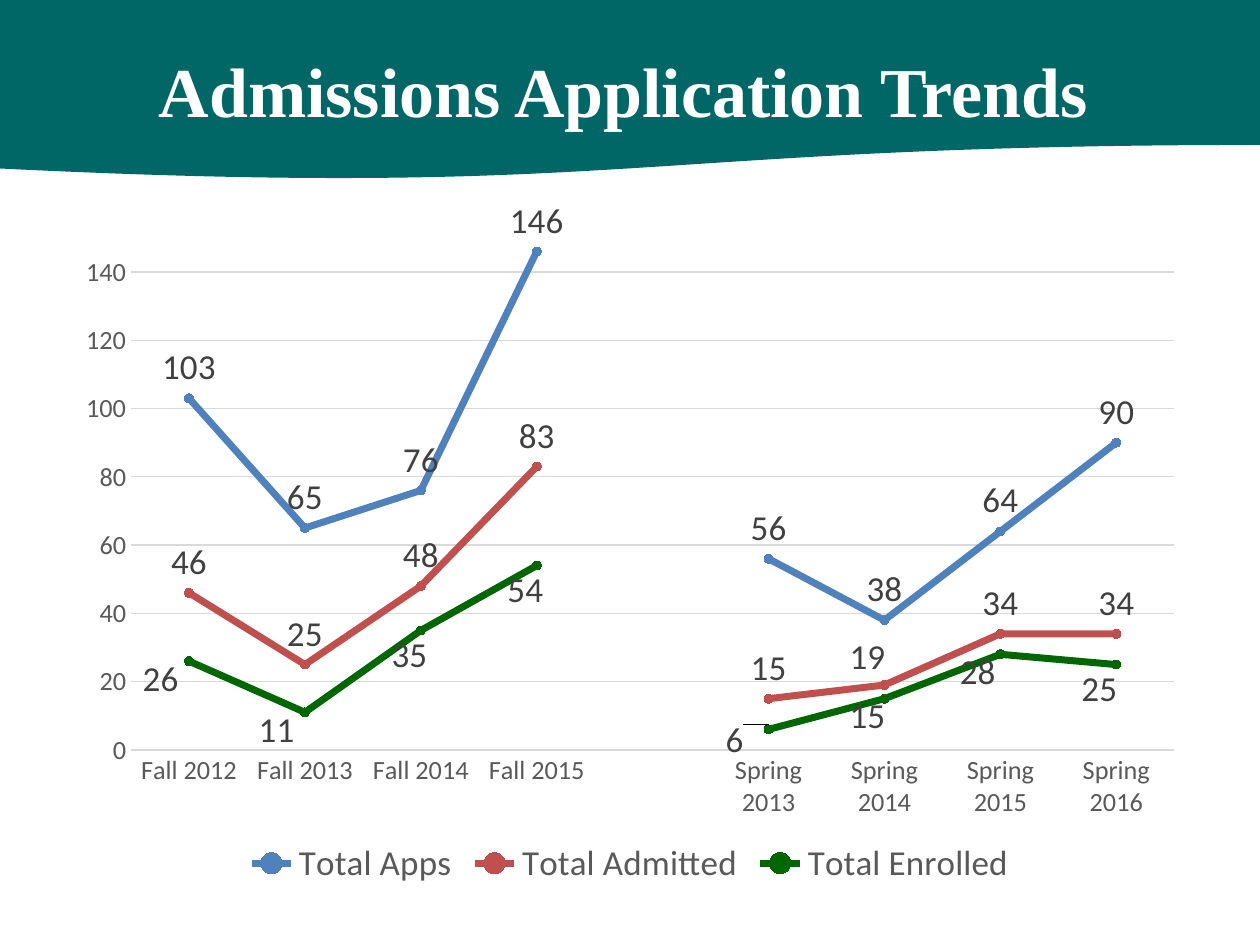
from dataclasses import dataclass, field

import pptx
import pptx.chart.data
import pptx.dml.color
import pptx.enum.chart
import pptx.enum.shapes
import pptx.enum.text
import pptx.oxml
import pptx.oxml.ns
import pptx.util

Cm = pptx.util.Cm
Pt = pptx.util.Pt
RGBColor = pptx.dml.color.RGBColor

TEAL = RGBColor(0x00, 0x66, 0x66)
WHITE = RGBColor(0xFF, 0xFF, 0xFF)
BLUE = RGBColor(0x4F, 0x81, 0xBD)
RED = RGBColor(0xC0, 0x50, 0x4D)
GREEN = RGBColor(0x00, 0x66, 0x00)
GRID = RGBColor(0xD9, 0xD9, 0xD9)
AXIS_TEXT = RGBColor(0x59, 0x59, 0x59)
LABEL_TEXT = RGBColor(0x40, 0x40, 0x40)


@dataclass
class Trend:
    name: str
    values: list[int | None]
    color: RGBColor
    # Point index -> label shift as fractions of the chart size
    shifts: dict[int, tuple[float, float]] = field(default_factory=dict)


CATEGORIES = ([f"Fall {y}" for y in range(2012, 2016)] + [""]
              + [f"Spring {y}" for y in range(2013, 2017)])
TRENDS = [
    Trend("Total Apps", [103, 65, 76, 146, None, 56, 38, 64, 90], BLUE),
    Trend("Total Admitted", [46, 25, 48, 83, None, 15, 19, 34, 34], RED,
          {6: (-0.015, 0.005)}),
    Trend("Total Enrolled", [26, 11, 35, 54, None, 6, 15, 28, 25], GREEN,
          {0: (-0.025, 0.07), 1: (-0.025, 0.07), 2: (-0.01, 0.08),
           3: (-0.01, 0.08), 5: (-0.03, 0.06), 6: (-0.015, 0.07),
           7: (-0.02, 0.07), 8: (-0.015, 0.08)}),
]


def set_font(font, size: int, color: RGBColor, name: str = "Calibri",
             bold: bool = False) -> None:
    font.size = Pt(size)
    font.name = name
    font.bold = bold
    font.color.rgb = color


def manual_layout(**values: float | str):
    """Build a chart layout element from its settings, in schema order."""
    items = "".join(f'<c:{k} val="{v}"/>' for k, v in values.items())
    return pptx.oxml.parse_xml(
        f'<c:layout {pptx.oxml.ns.nsdecls("c")}>'
        f"<c:manualLayout>{items}</c:manualLayout></c:layout>")


def draw_band(slide) -> None:
    sp = slide.shapes.add_shape(
        pptx.enum.shapes.MSO_SHAPE.FLOWCHART_DOCUMENT,
        0, 0, Cm(25.4), Cm(3.6))
    sp.shadow.inherit = False
    sp.fill.solid()
    sp.fill.fore_color.rgb = TEAL
    sp.line.color.rgb = TEAL
    sp.line.width = Pt(2)
    # Send the band behind the title
    slide.shapes.element.insert(2, sp.element)


def write_title(slide, text: str) -> None:
    sp = slide.shapes.title
    sp.left, sp.top, sp.width, sp.height = Cm(0.84), Cm(0.7), Cm(23.44), Cm(2.2)
    tf = sp.text_frame
    tf.margin_left = tf.margin_right = tf.margin_top = tf.margin_bottom = Cm(0.1)
    tf.vertical_anchor = pptx.enum.text.MSO_ANCHOR.MIDDLE
    tf.text = text
    p = tf.paragraphs[0]
    p.alignment = pptx.enum.text.PP_ALIGN.CENTER
    set_font(p.runs[0].font, 40, WHITE, "Times New Roman", bold=True)


def style_axis(axis) -> None:
    axis.major_tick_mark = pptx.enum.chart.XL_TICK_MARK.NONE
    axis.minor_tick_mark = pptx.enum.chart.XL_TICK_MARK.NONE
    set_font(axis.tick_labels.font, 15, AXIS_TEXT)


def style_series(series, trend: Trend) -> None:
    above = pptx.enum.chart.XL_LABEL_POSITION.ABOVE
    series.smooth = False
    series.format.line.color.rgb = trend.color
    series.format.line.width = Pt(4)
    marker = series.marker
    marker.style = pptx.enum.chart.XL_MARKER_STYLE.CIRCLE
    marker.size = 5
    marker.format.fill.solid()
    marker.format.fill.fore_color.rgb = trend.color
    marker.format.line.color.rgb = trend.color

    labels = series.data_labels
    labels.show_value = True
    labels.position = above
    set_font(labels.font, 20, LABEL_TEXT)
    for idx, (dx, dy) in trend.shifts.items():
        label = series.points[idx].data_label
        set_font(label.font, 20, LABEL_TEXT)
        label.position = above
        idx_el = series._element.xpath(f"c:dLbls/c:dLbl/c:idx[@val='{idx}']")[0]
        idx_el.addnext(manual_layout(x=dx, y=dy))


def draw_chart(slide, trends: list[Trend]) -> None:
    data = pptx.chart.data.CategoryChartData()
    data.categories = CATEGORIES
    for trend in trends:
        data.add_series(trend.name, trend.values)
    chart = slide.shapes.add_chart(
        pptx.enum.chart.XL_CHART_TYPE.LINE_MARKERS,
        Cm(1.27), Cm(4.01), Cm(22.86), Cm(13.97), data).chart
    set_font(chart.font, 10, RGBColor(0, 0, 0))
    chart.has_title = False

    # Plot area
    plot_area = chart._chartSpace.chart.plotArea
    for old in plot_area.xpath("c:layout"):
        plot_area.remove(old)
    plot_area.insert(0, manual_layout(
        layoutTarget="inner", xMode="edge", yMode="edge",
        x=0.06, y=0.055, w=0.92, h=0.74))

    # Axes
    style_axis(chart.category_axis)
    chart.category_axis.format.line.color.rgb = GRID
    chart.category_axis.format.line.width = Pt(0.75)
    axis = chart.value_axis
    style_axis(axis)
    axis.format.line.fill.background()
    axis.minimum_scale, axis.maximum_scale, axis.major_unit = 0, 150, 20
    axis.major_gridlines.format.line.color.rgb = GRID
    axis.major_gridlines.format.line.width = Pt(0.75)

    # Legend
    chart.has_legend = True
    chart.legend.position = pptx.enum.chart.XL_LEGEND_POSITION.BOTTOM
    chart.legend.include_in_layout = False
    set_font(chart.legend.font, 20, AXIS_TEXT)

    # Series
    chart.plots[0].vary_by_categories = False
    for series, trend in zip(chart.plots[0].series, trends):
        style_series(series, trend)


def main() -> None:
    prs = pptx.Presentation()
    prs.slide_width, prs.slide_height = Cm(25.4), Cm(19.05)
    s = prs.slides.add_slide(prs.slide_layouts.get_by_name("Title Only"))
    draw_band(s)
    write_title(s, "Admissions Application Trends")
    draw_chart(s, TRENDS)
    prs.save("out.pptx")


if __name__ == "__main__":
    main()
